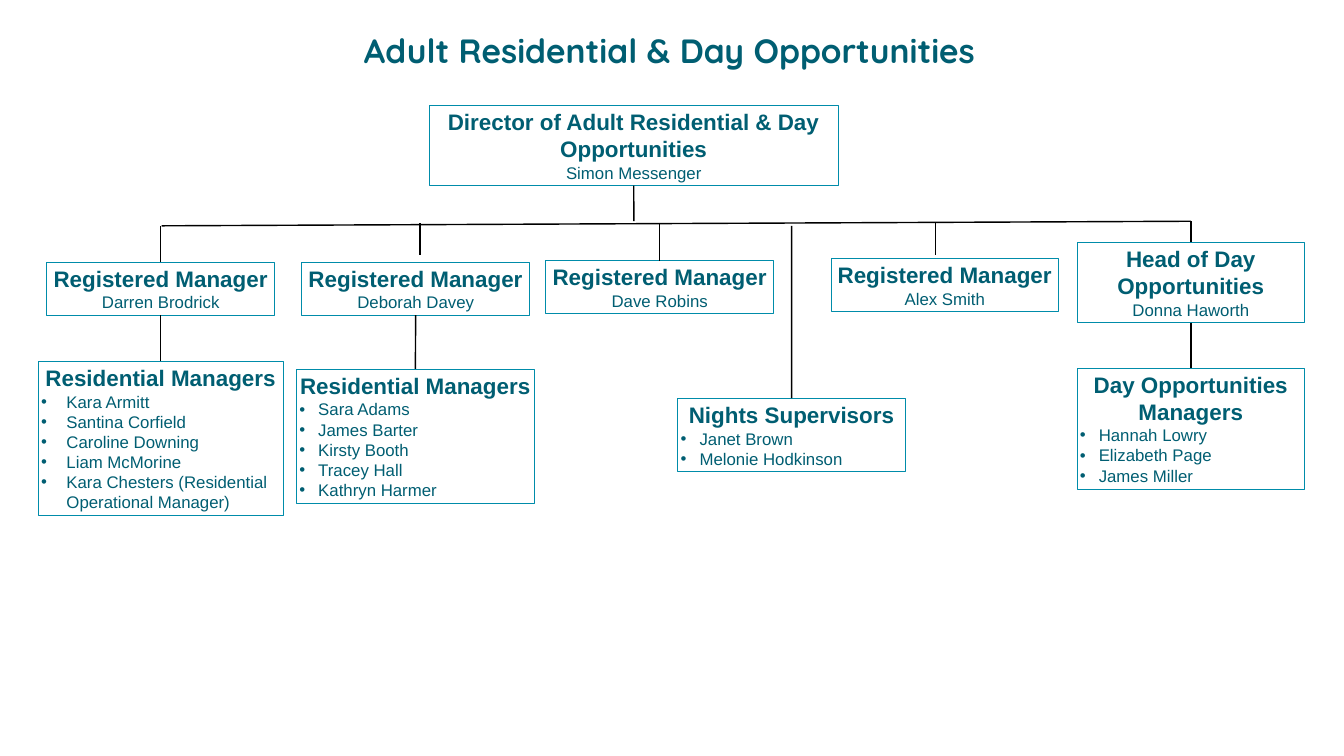
"""Build the organisation chart for Adult Residential & Day Opportunities."""
from dataclasses import dataclass
from typing import Optional, Union

import lxml.etree
import pptx
import pptx.dml.color
import pptx.enum.shapes
import pptx.enum.text
import pptx.oxml.ns
import pptx.shapes.autoshape
import pptx.slide
import pptx.text.text
import pptx.util

Cm = pptx.util.Cm
Pt = pptx.util.Pt
RGBColor = pptx.dml.color.RGBColor
Align = pptx.enum.text.PP_ALIGN
Anchor = pptx.enum.text.MSO_ANCHOR
AutoSize = pptx.enum.text.MSO_AUTO_SIZE
qn = pptx.oxml.ns.qn


@dataclass(frozen=True)
class Theme:
    ink: RGBColor = RGBColor(0x00, 0x5E, 0x72)
    border: RGBColor = RGBColor(0x00, 0x8C, 0xAA)
    link: RGBColor = RGBColor(0, 0, 0)
    title_font: str = "Quicksand"
    body_font: str = "Arial"
    title_size: int = 48
    role_size: int = 32
    name_size: int = 24
    border_width: int = 1
    link_width: int = 2


@dataclass(frozen=True)
class Post:
    role: str
    people: tuple[str, ...]
    left: float
    top: float
    width: float = 11.48
    height: float = 2.67
    bullet_indent: Optional[float] = None


Point = tuple[float, float]
Box = pptx.shapes.autoshape.Shape
End = Union[Point, Box]

THEME = Theme()
TOP, BOTTOM = 0, 2

DIRECTOR = Post("Director of Adult Residential & Day Opportunities",
                ("Simon Messenger",), 21.64, 5.31, 20.6, 4.04)
DARREN = Post("Registered Manager", ("Darren Brodrick",), 2.36, 13.21)
DEBORAH = Post("Registered Manager", ("Deborah Davey",), 15.21, 13.21)
DAVE = Post("Registered Manager", ("Dave Robins",), 27.51, 13.13)
ALEX = Post("Registered Manager", ("Alex Smith",), 41.88, 13.03)
DAY_HEAD = Post("Head of Day Opportunities", ("Donna Haworth",), 54.28, 12.22, height=4.04)
DARREN_TEAM = Post(
    "Residential Managers",
    ("Kara Armitt", "Santina Corfield", "Caroline Downing", "Liam McMorine",
     "Kara Chesters (Residential Operational Manager)"),
    1.93, 18.19, 12.34, 7.8, bullet_indent=1.27)
DEBORAH_TEAM = Post(
    "Residential Managers",
    ("Sara Adams", "James Barter", "Kirsty Booth", "Tracey Hall", "Kathryn Harmer"),
    14.94, 18.59, 11.99, 6.78, bullet_indent=0.95)
NIGHTS = Post("Nights Supervisors", ("Janet Brown", "Melonie Hodkinson"),
              34.16, 20.07, height=3.71, bullet_indent=0.95)
DAY_TEAM = Post("Day Opportunities Managers",
                ("Hannah Lowry", "Elizabeth Page", "James Miller"),
                54.28, 18.54, height=6.1, bullet_indent=0.95)
POSTS = (DIRECTOR, DARREN, DEBORAH, DAVE, ALEX, DAY_HEAD,
         DARREN_TEAM, DEBORAH_TEAM, NIGHTS, DAY_TEAM)


def write(paragraph: pptx.text.text._Paragraph, text: str, *, size: int,
          font: str = THEME.body_font, bold: bool = False,
          align: Align = Align.CENTER, bullet_indent: Optional[float] = None) -> None:
    if bullet_indent is not None:
        properties = paragraph._p.get_or_add_pPr()
        properties.set("marL", str(Cm(bullet_indent)))
        properties.set("indent", str(-Cm(bullet_indent)))
        lxml.etree.SubElement(properties, qn("a:buFont"), typeface=THEME.body_font)
        lxml.etree.SubElement(properties, qn("a:buChar"), char="•")
    paragraph.alignment = align
    run = paragraph.add_run()
    run.text = text
    run.font.size = Pt(size)
    run.font.name = font
    run.font.bold = bold
    run.font.color.rgb = THEME.ink


def draw_title(slide: pptx.slide.Slide, text: str) -> None:
    title = slide.shapes.title
    title.left, title.top, title.width, title.height = Cm(1.73), Cm(1.73), Cm(64.03), Cm(2.54)
    frame = title.text_frame
    frame.auto_size = AutoSize.NONE
    frame.vertical_anchor = Anchor.TOP
    frame.margin_top = frame.margin_bottom = 0
    heading = frame.paragraphs[0]
    heading.line_spacing = 0.9
    write(heading, text, size=THEME.title_size, font=THEME.title_font, bold=True)


def draw_post(slide: pptx.slide.Slide, post: Post) -> Box:
    box = slide.shapes.add_shape(
        pptx.enum.shapes.MSO_SHAPE.RECTANGLE,
        Cm(post.left), Cm(post.top), Cm(post.width), Cm(post.height))
    box.shadow.inherit = False
    box.fill.background()
    box.line.color.rgb = THEME.border
    box.line.width = Pt(THEME.border_width)
    frame = box.text_frame
    frame.word_wrap = True
    frame.auto_size = AutoSize.SHAPE_TO_FIT_TEXT
    frame.vertical_anchor = Anchor.MIDDLE
    frame.margin_left = frame.margin_right = Cm(0.15)
    frame.margin_top = frame.margin_bottom = Cm(0.15)
    write(frame.paragraphs[0], post.role, size=THEME.role_size, bold=True)
    align = Align.CENTER if post.bullet_indent is None else Align.LEFT
    for person in post.people:
        write(frame.add_paragraph(), person, size=THEME.name_size,
              align=align, bullet_indent=post.bullet_indent)
    return box


def draw_link(slide: pptx.slide.Slide, upper: End, lower: End) -> None:
    start = upper if isinstance(upper, tuple) else (0, 0)
    finish = lower if isinstance(lower, tuple) else (0, 0)
    link = slide.shapes.add_connector(
        pptx.enum.shapes.MSO_CONNECTOR.STRAIGHT, *map(Cm, start + finish))
    if not isinstance(upper, tuple):
        link.begin_connect(upper, BOTTOM)
    if not isinstance(lower, tuple):
        link.end_connect(lower, TOP)
    link.line.color.rgb = THEME.link
    link.line.width = Pt(THEME.link_width)
    lxml.etree.SubElement(link._element.spPr, qn("a:effectLst"))


def main() -> None:
    deck = pptx.Presentation()
    deck.slide_width, deck.slide_height = Cm(67.74), Cm(38.1)
    slide = deck.slides.add_slide(deck.slide_layouts[5])
    draw_title(slide, "Adult Residential & Day Opportunities")
    boxes = {post: draw_post(slide, post) for post in POSTS}

    bus_left, bus_right = (8.15, 11.38), (60.02, 11.15)
    links: tuple[tuple[End, End], ...] = (
        (bus_left, bus_right),
        (boxes[DIRECTOR], (31.95, 11.15)),
        ((8.1, 11.38), boxes[DARREN]),
        ((21.16, 11.25), (21.16, 12.85)),
        ((33.25, 11.23), boxes[DAVE]),
        ((39.9, 11.38), boxes[NIGHTS]),
        ((47.14, 11.23), (47.14, 12.83)),
        (bus_right, boxes[DAY_HEAD]),
        (boxes[DARREN], boxes[DARREN_TEAM]),
        (boxes[DEBORAH], boxes[DEBORAH_TEAM]),
        (boxes[DAY_HEAD], boxes[DAY_TEAM]),
    )
    for upper, lower in links:
        draw_link(slide, upper, lower)
    deck.save("out.pptx")


if __name__ == "__main__":
    main()
